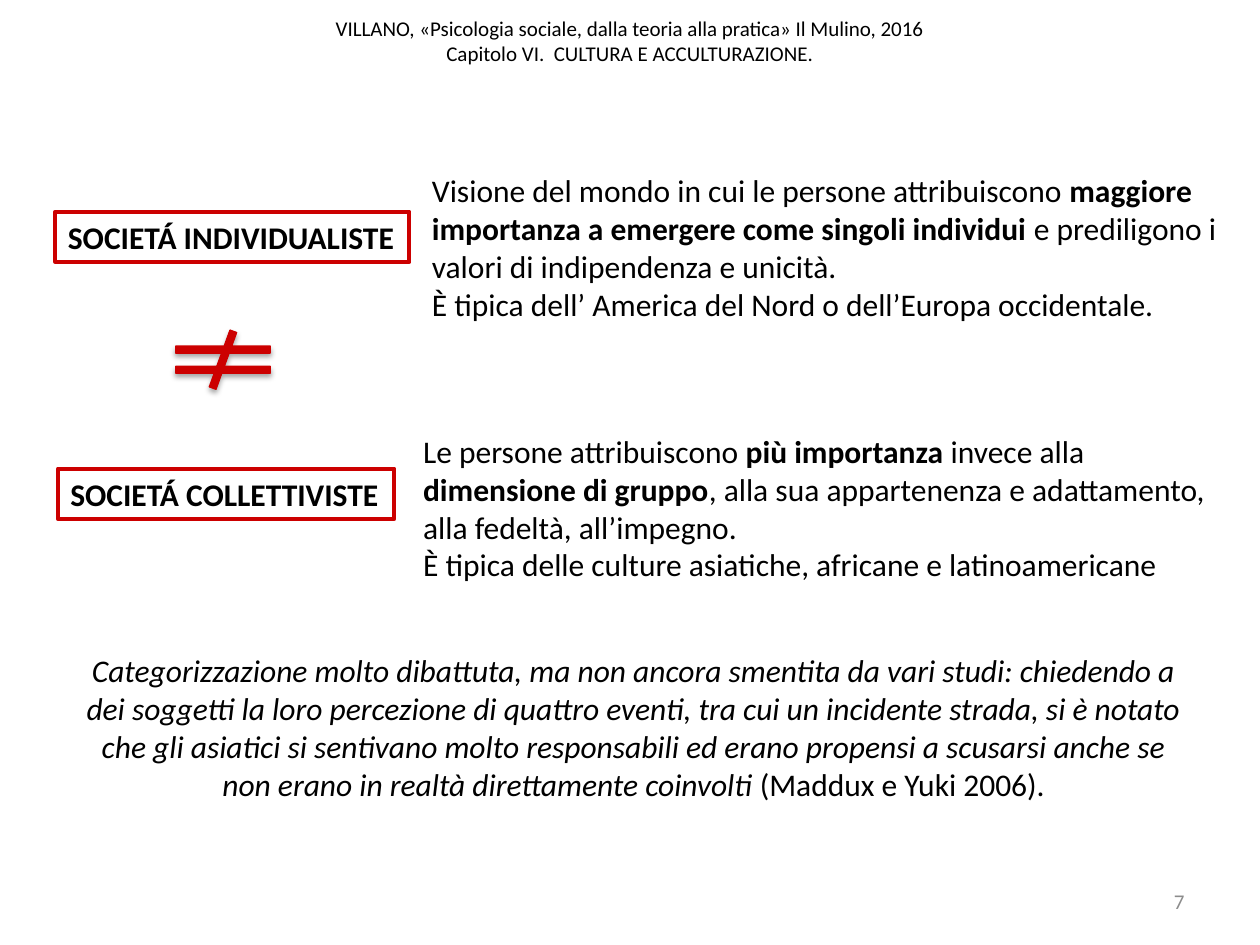
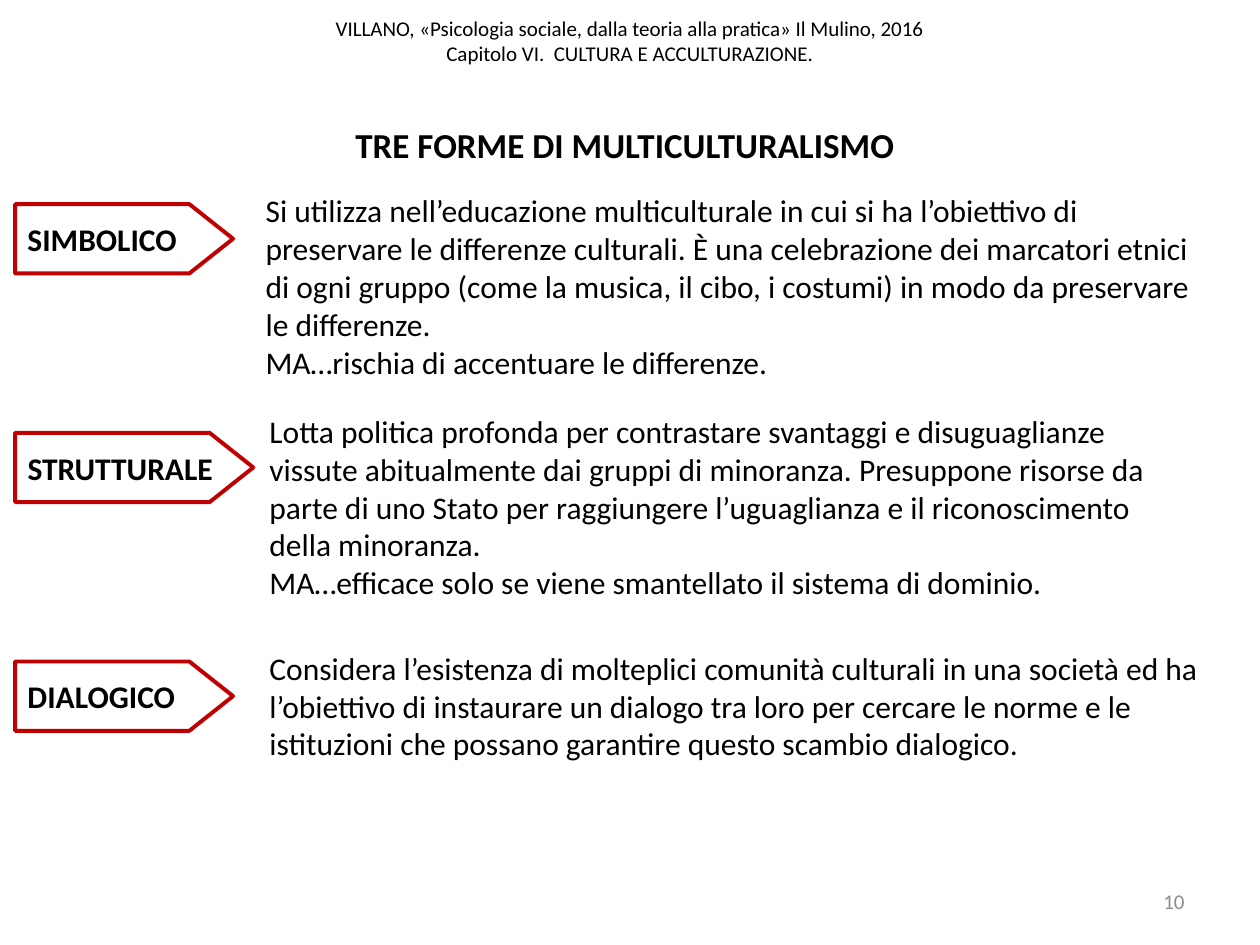
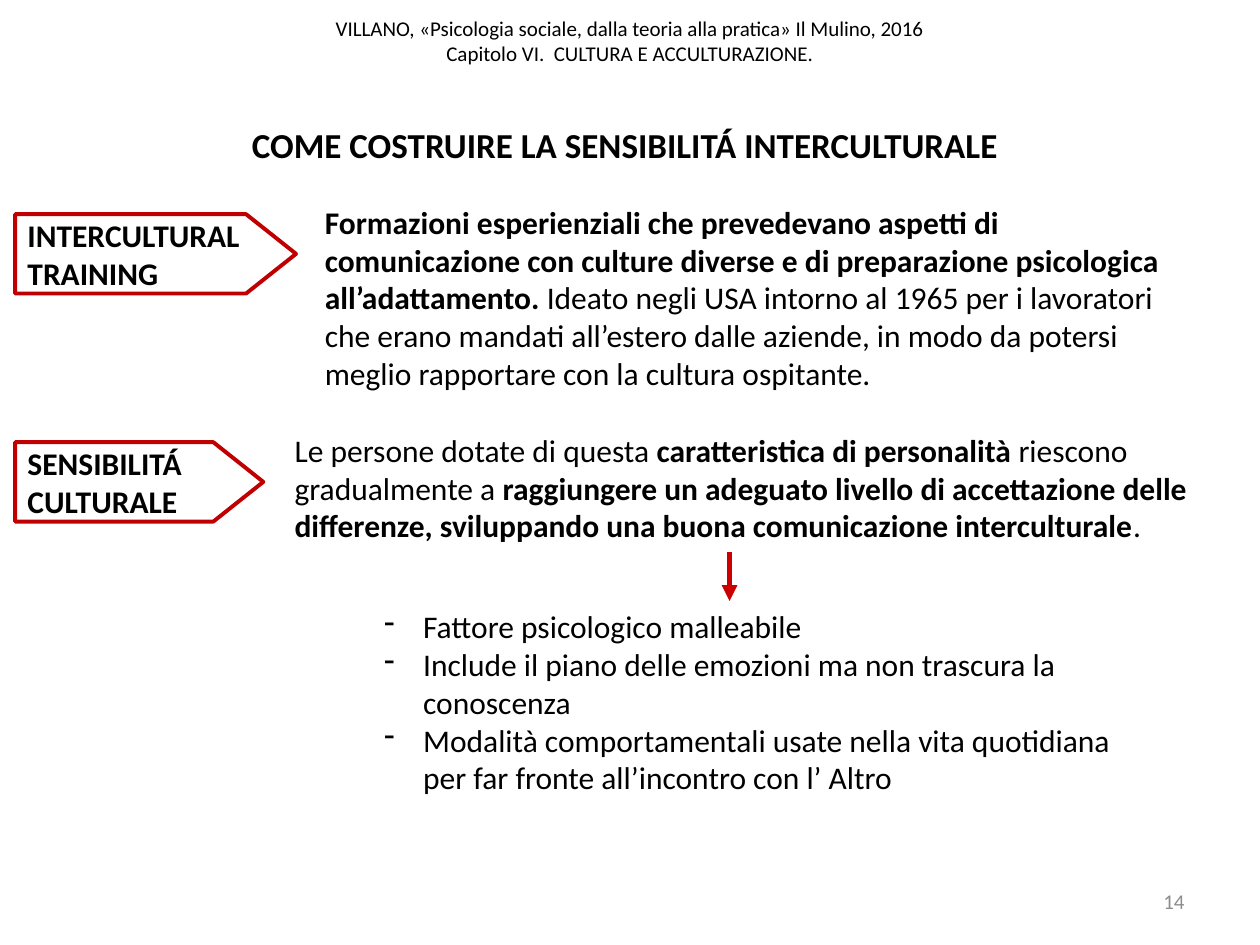
"""Build three slides on culture and acculturation."""
from lxml import etree
from pptx import Presentation
from pptx import util as u
from pptx.dml.color import RGBColor
from pptx.enum import shapes, text
from pptx.oxml import ns

BLACK = RGBColor(0x00, 0x00, 0x00)
GREY = RGBColor(0x8C, 0x8C, 0x8C)
RED = RGBColor(0xCC, 0x00, 0x00)
DARK_RED = RGBColor(0xC0, 0x00, 0x00)
LEFT, CENTER, RIGHT = text.PP_ALIGN.LEFT, text.PP_ALIGN.CENTER, text.PP_ALIGN.RIGHT
TOP, MIDDLE = text.MSO_ANCHOR.TOP, text.MSO_ANCHOR.MIDDLE
SHAPE = shapes.MSO_SHAPE
HEADER = ("VILLANO, «Psicologia sociale, dalla teoria alla pratica» Il Mulino, 2016",
          "Capitolo VI.  CULTURA E ACCULTURAZIONE.")


def child(parent, tag, **attributes):
    """Append a DrawingML element and return it."""
    return etree.SubElement(parent, ns.qn("a:" + tag), attributes)


class Deck:
    """Hold the style, a grid of 100 columns by 75 rows, and the current slide."""

    font, body, small, heading = "Calibri", 18, 12, 20
    columns, rows = 100, 75

    def __init__(self):
        """Start a 10 by 7.5 inch presentation."""
        self.prs = Presentation()
        self.prs.slide_width, self.prs.slide_height = u.Inches(10), u.Inches(7.5)

    def place(self, col, row):
        """Turn a grid position or size into lengths."""
        return (u.Emu(round(self.prs.slide_width * col / self.columns)),
                u.Emu(round(self.prs.slide_height * row / self.rows)))

    def slide(self, number, title=None):
        """Add a slide with its header, page number and optional title."""
        self.s = self.prs.slides.add_slide(self.prs.slide_layouts[6])
        self.text((0, -1.1, 100, 8.7), HEADER, self.small, align=CENTER, anchor=MIDDLE)
        self.text((71.7, 69.5, 23.3, 4), [str(number)], self.small, GREY, RIGHT, MIDDLE)
        if title:
            self.text((16.9, 9.3, 65.4, 4.4), [f"*{title}*"], self.heading, align=CENTER)

    def paragraphs(self, tf, contents, size, color=BLACK, align=LEFT, italic=False):
        """Fill a text frame, with words between asterisks in bold or italic."""
        for i, content in enumerate(contents):
            p = tf.paragraphs[0] if i == 0 else tf.add_paragraph()
            p.alignment = align
            for j, piece in enumerate(content.split("*")):
                if piece:
                    marked = j % 2 == 1
                    r = p.add_run()
                    r.text = piece
                    r.font.name, r.font.size = self.font, u.Pt(size)
                    r.font.color.rgb = color
                    r.font.bold, r.font.italic = marked and not italic, marked and italic

    def text(self, box, contents, size=body, color=BLACK, align=LEFT, anchor=TOP,
             italic=False):
        """Add a wrapping text box."""
        sp = self.s.shapes.add_textbox(*self.place(*box[:2]), *self.place(*box[2:]))
        tf = sp.text_frame
        tf.word_wrap, tf.vertical_anchor = True, anchor
        self.paragraphs(tf, contents, size, color, align, italic)
        return tf

    def bullets(self, box, items):
        """Add a list marked with dashes."""
        indent = u.Inches(0.31)
        for p in self.text(box, items).paragraphs:
            pPr = p._p.get_or_add_pPr()
            pPr.set("marL", str(indent))
            pPr.set("indent", str(-indent))
            child(pPr, "buChar", char="-")

    def shape(self, kind, box, color, width, adjustments=()):
        """Add an unfilled preset shape with a coloured outline."""
        sp = self.s.shapes.add_shape(kind, *self.place(*box[:2]), *self.place(*box[2:]))
        sp.shadow.inherit = False
        sp.fill.background()
        sp.line.color.rgb, sp.line.width = color, u.Pt(width)
        for i, value in enumerate(adjustments):
            sp.adjustments[i] = value
        return sp

    def label(self, box, words):
        """Add a framed label on one line."""
        tf = self.shape(SHAPE.RECTANGLE, box, RED, 2.25).text_frame
        tf.word_wrap, tf.vertical_anchor = False, TOP
        tf.auto_size = text.MSO_AUTO_SIZE.SHAPE_TO_FIT_TEXT
        self.paragraphs(tf, [f"*{words}*"], self.body)

    def tag(self, row, width, height, words):
        """Add a pointed label at the left edge."""
        box = (1.2, row, width, height)
        tf = self.shape(SHAPE.PENTAGON, box, DARK_RED, 2.25, [0.63]).text_frame
        tf.word_wrap, tf.vertical_anchor = True, MIDDLE
        self.paragraphs(tf, [f"*{words}*"], self.body)

    def not_equal(self, box):
        """Add a red inequality sign with a soft shadow."""
        sp = self.shape(SHAPE.MATH_NOT_EQUAL, box, RED, 0.75, [0.12, 66, 0.22])
        sp.fill.solid()
        sp.fill.fore_color.rgb = RED
        effects = sp._element.spPr.find(ns.qn("a:effectLst"))
        shadow = child(effects, "outerShdw", blurRad=str(u.Pt(3.1)), dist=str(u.Pt(1.8)),
                       dir="5400000", rotWithShape="0")
        child(child(shadow, "srgbClr", val=str(BLACK)), "alpha", val="35000")

    def arrow(self, start, end):
        """Add a red arrow."""
        sp = self.s.shapes.add_connector(shapes.MSO_CONNECTOR.STRAIGHT,
                                         *self.place(*start), *self.place(*end))
        sp.line.color.rgb, sp.line.width = RED, u.Pt(3)
        spPr = sp._element.spPr
        child(spPr.find(ns.qn("a:ln")), "tailEnd", type="triangle")
        child(spPr, "effectLst")


def societies(deck):
    """Compare individualist and collectivist societies."""
    deck.slide(7)
    deck.label((4.4, 16.8, 28.1, 4), "SOCIETÁ INDIVIDUALISTE")
    deck.label((4.6, 37.2, 26.7, 4), "SOCIETÁ COLLETTIVISTE")
    deck.not_equal((12.6, 26.2, 10.2, 4.7))
    deck.text((33.3, 13.1, 64.7, 13.1), [
        "Visione del mondo in cui le persone attribuiscono *maggiore importanza a emergere "
        "come singoli individui* e prediligono i valori di indipendenza e unicità.",
        "È tipica dell’ America del Nord o dell’Europa occidentale."])
    deck.text((32.6, 33.8, 65.9, 13.1), [
        "Le persone attribuiscono *più importanza *invece alla *dimensione di gruppo*, alla "
        "sua appartenenza e adattamento, alla fedeltà, all’impegno.",
        "È tipica delle culture asiatiche, africane e latinoamericane"])
    deck.text((5.6, 51.2, 89.4, 13.1), [
        "*Categorizzazione molto dibattuta, ma non ancora smentita da vari studi: chiedendo a "
        "dei soggetti la loro percezione di quattro eventi, tra cui un incidente strada, si è "
        "notato che gli asiatici si sentivano molto responsabili ed erano propensi a scusarsi "
        "anche se non erano in realtà direttamente coinvolti *(Maddux e Yuki 2006)."],
        align=CENTER, italic=True)


def multiculturalism(deck):
    """Describe the three forms of multiculturalism."""
    deck.slide(10, "TRE FORME DI MULTICULTURALISMO")
    forms = [
        ("SIMBOLICO", 17.3, (20.1, 14.7, 76.4, 16.2), [
            "Si utilizza nell’educazione multiculturale in cui si ha l’obiettivo di preservare "
            "le differenze culturali. È una celebrazione dei marcatori etnici di ogni gruppo "
            "(come la musica, il cibo, i costumi) in modo da preservare le differenze.",
            "MA…rischia di accentuare le differenze."]),
        ("STRUTTURALE", 18.9, (20.4, 32.2, 75.2, 16.2), [
            "Lotta politica profonda per contrastare svantaggi e disuguaglianze vissute "
            "abitualmente dai gruppi di minoranza. Presuppone risorse da parte di uno Stato per "
            "raggiungere l’uguaglianza e il riconoscimento della minoranza.",
            "MA…efficace solo se viene smantellato il sistema di dominio."]),
        ("DIALOGICO", 17.3, (20.4, 51, 76.1, 10.1), [
            "Considera l’esistenza di molteplici comunità culturali in una società ed ha "
            "l’obiettivo di instaurare un dialogo tra loro per cercare le norme e le istituzioni "
            "che possano garantire questo scambio dialogico."]),
    ]
    for i, (name, width, box, contents) in enumerate(forms):
        deck.tag(16.2 + 18.15 * i, width, 5.5, name)
        deck.text(box, contents)


def sensitivity(deck):
    """Explain how intercultural sensitivity is built."""
    deck.slide(14, "COME COSTRUIRE LA SENSIBILITÁ INTERCULTURALE")
    deck.tag(17, 22.3, 6.3, "INTERCULTURAL TRAINING")
    deck.text((24.8, 15.6, 69.4, 16.2), [
        "*Formazioni esperienziali che prevedevano aspetti di comunicazione con culture diverse "
        "e di preparazione psicologica all’adattamento. *Ideato negli USA intorno al 1965 per i "
        "lavoratori che erano mandati all’estero dalle aziende, in modo da potersi meglio "
        "rapportare con la cultura ospitante."])
    deck.tag(35.1, 19.7, 6.3, "SENSIBILITÁ CULTURALE")
    deck.text((22.4, 33.7, 75.6, 10.1), [
        "Le persone dotate di questa *caratteristica di personalità *riescono gradualmente a "
        "*raggiungere un adeguato livello di accettazione delle differenze, sviluppando una "
        "buona comunicazione interculturale*."])
    deck.arrow((57.9, 43.8), (57.9, 47.7))
    deck.bullets((29.5, 47.7, 63.1, 19.2), [
        "Fattore psicologico malleabile",
        "Include il piano delle emozioni ma non trascura la conoscenza",
        "Modalità comportamentali usate nella vita quotidiana per far fronte all’incontro "
        "con l’ Altro"])


def main():
    """Build and save the slides."""
    deck = Deck()
    for build in (societies, multiculturalism, sensitivity):
        build(deck)
    deck.prs.save("out.pptx")


if __name__ == "__main__":
    main()
